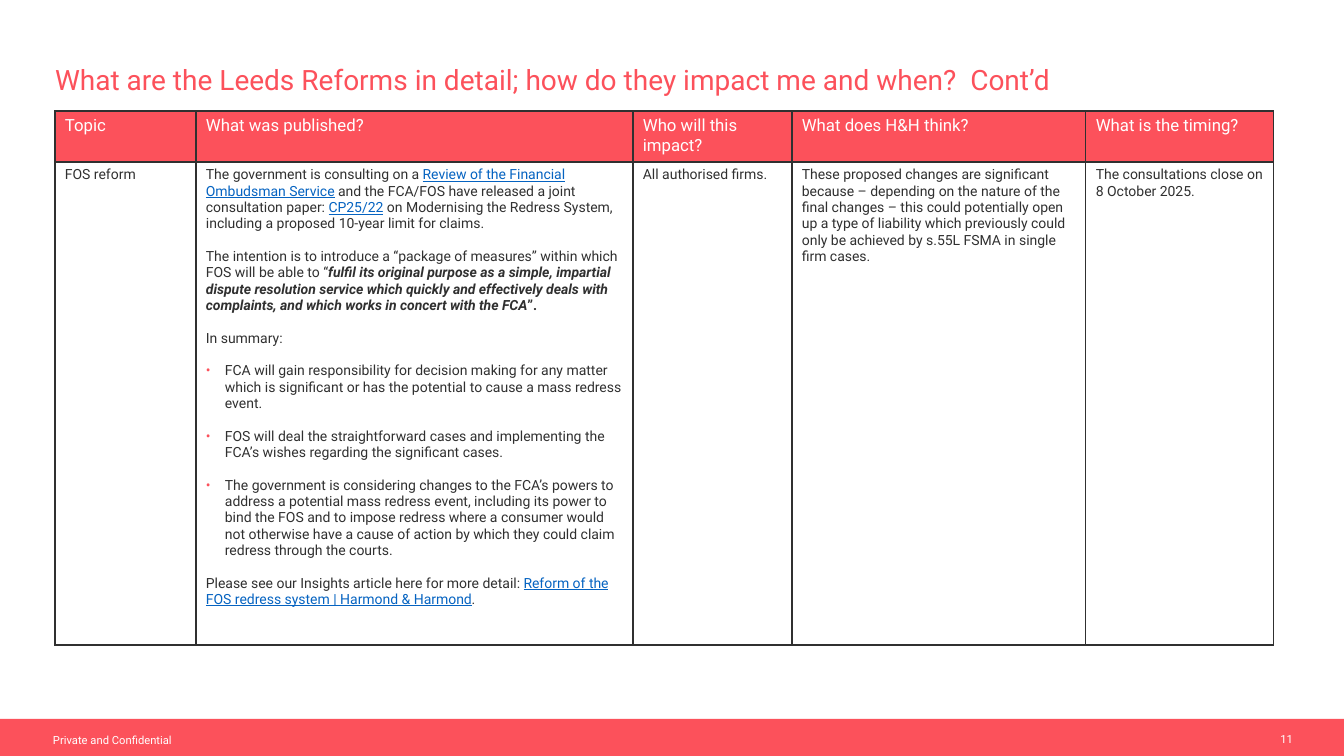
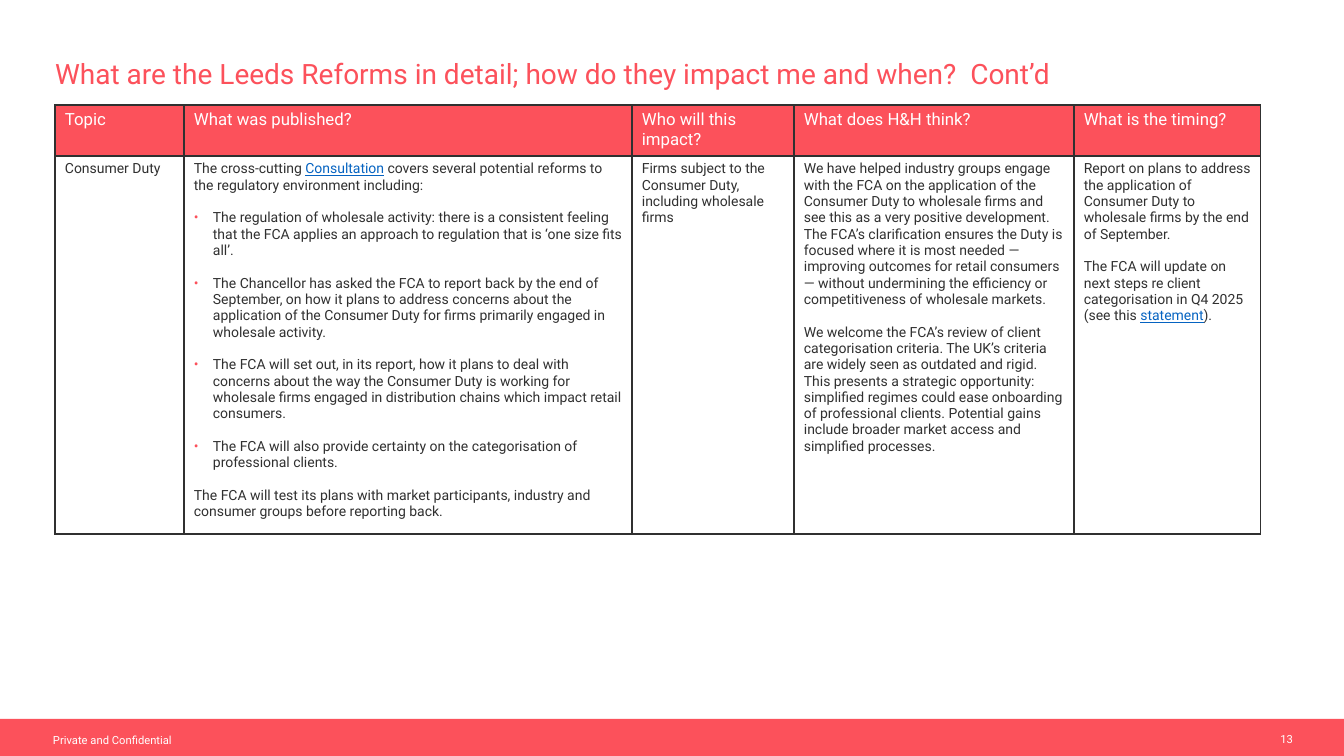
from lxml.etree import SubElement
from pptx import Presentation
from pptx.dml.color import RGBColor
from pptx.enum.shapes import MSO_SHAPE as Shape
from pptx.enum.text import MSO_ANCHOR as Anchor, MSO_AUTO_SIZE as AutoSize, PP_ALIGN as Align
from pptx.oxml import parse_xml
from pptx.oxml.ns import nsdecls, qn
from pptx.util import Emu, Pt

WIDTH, HEIGHT = 1344, 756
TITLE = "What are the Leeds Reforms in detail; how do they impact me and when?  Cont’d"
HEADERS = ["Topic", "What was published?", "Who will this impact?",
           "What does H&H think?", "What is the timing?"]


def px(length):
    return Emu(round(length * 914400 / 100.8))


def color(value):
    return RGBColor.from_string(value)


class Deck:
    FONT = "Roboto"
    RED, DARK, BLUE, WHITE = "FC515B", "303030", "0563C1", "FFFFFF"
    LEFT, HEADER_HEIGHT, INDENT = 55, 51, 19
    PARAGRAPH_GAP = Pt(11.7)

    def __init__(self):
        self.presentation = Presentation()
        self.presentation.slide_width = px(WIDTH)
        self.presentation.slide_height = px(HEIGHT)
        self.slide = None

    def add_slide(self, number, top):
        layout = self.presentation.slide_layouts[5]
        self.slide = self.presentation.slides.add_slide(layout)
        self.band(719, HEIGHT - 719)
        self.label("Private and Confidential", 53, 734, 190, 13, margin=0)
        self.label(number, 1248, 724, 55, 29, margin=10, align=Align.RIGHT)
        self.title(TITLE, top)

    def run(self, paragraph, text, size, fill, style=None):
        run = paragraph.add_run()
        run.text = text
        font = run.font
        font.name, font.size = self.FONT, Pt(size)
        font.bold = style in ("strong", "quote")
        font.italic = style == "quote"
        font.underline = style == "link"
        font.color.rgb = color(self.BLUE if style == "link" else fill)

    def band(self, top, height):
        shape = self.slide.shapes.add_shape(Shape.RECTANGLE, 0, px(top), px(WIDTH), px(height))
        shape.shadow.inherit = False
        shape.fill.solid()
        shape.fill.fore_color.rgb = color(self.RED)
        shape.line.fill.background()

    def label(self, text, left, top, width, height, margin, align=Align.LEFT):
        box = self.slide.shapes.add_textbox(px(left), px(top), px(width), px(height))
        frame = box.text_frame
        frame.word_wrap = True
        frame.vertical_anchor = Anchor.MIDDLE
        frame.margin_left = frame.margin_right = px(margin)
        frame.margin_top = frame.margin_bottom = 0
        paragraph = frame.paragraphs[0]
        paragraph.alignment = align
        self.run(paragraph, text, 8, self.WHITE)

    def title(self, text, top):
        shape = self.slide.shapes.title
        shape.left, shape.top = px(self.LEFT), px(top)
        shape.width, shape.height = px(1232), px(44)
        frame = shape.text_frame
        frame.auto_size = AutoSize.NONE
        frame.word_wrap = True
        frame.vertical_anchor = Anchor.TOP
        frame.margin_left = 0
        frame.margin_top = frame.margin_right = frame.margin_bottom = px(5)
        paragraph = frame.paragraphs[0]
        paragraph.alignment = Align.LEFT
        self.run(paragraph, text, 20, self.RED)

    def bullet(self, paragraph):
        properties = paragraph._p.get_or_add_pPr()
        properties.set("marL", str(px(self.INDENT)))
        properties.set("indent", str(-px(self.INDENT)))
        bullet_color = SubElement(properties, qn("a:buClr"))
        SubElement(bullet_color, qn("a:srgbClr"), val=self.RED)
        SubElement(properties, qn("a:buFont"), typeface=self.FONT)
        SubElement(properties, qn("a:buChar"), char="•")

    def borders(self, cell):
        properties = cell._tc.get_or_add_tcPr()
        for index, side in enumerate("LRTB"):
            properties.insert(index, parse_xml(
                f'<a:ln{side} {nsdecls("a")} w="{Pt(1)}"><a:solidFill>'
                f'<a:srgbClr val="{self.DARK}"/></a:solidFill></a:ln{side}>'))

    def cell(self, cell, paragraphs, size, text_color, fill=None):
        if fill:
            cell.fill.solid()
            cell.fill.fore_color.rgb = color(fill)
        else:
            cell.fill.background()
        self.borders(cell)
        cell.margin_left = cell.margin_right = px(10)
        cell.margin_top = cell.margin_bottom = px(5)
        frame = cell.text_frame
        for index, (kind, runs) in enumerate(paragraphs):
            paragraph = frame.add_paragraph() if index else frame.paragraphs[0]
            if kind == "bullet":
                self.bullet(paragraph)
            if index:
                paragraph.space_before = self.PARAGRAPH_GAP
            for text, style in runs:
                self.run(paragraph, text, size, text_color, style)

    def table(self, top, widths, body_height, body):
        heights = [self.HEADER_HEIGHT, body_height]
        table = self.slide.shapes.add_table(
            2, len(widths), px(self.LEFT), px(top), px(sum(widths)), px(sum(heights))).table
        table.first_row = table.horz_banding = False
        for row, height in zip(table.rows, heights):
            row.height = px(height)
        for index, (width, header, paragraphs) in enumerate(zip(widths, HEADERS, body)):
            table.columns[index].width = px(width)
            self.cell(table.cell(0, index), [plain(header)], 12, self.WHITE, self.RED)
            self.cell(table.cell(1, index), paragraphs, 10, self.DARK)


def rich(*runs):
    return "plain", [run if isinstance(run, tuple) else (run, None) for run in runs]


def plain(text):
    return rich(text)


def bullet(text):
    return "bullet", [(text, None)]


def link(text):
    return text, "link"


FOS_REFORM = [
    [plain("FOS reform")],
    [
        rich("The government is consulting on a ",
             link("Review of the Financial Ombudsman Service"),
             " and the FCA/FOS have released a joint consultation paper: ",
             link("CP25/22"),
             " on Modernising the Redress System, including a proposed 10-year limit for claims."),
        rich("The intention is to introduce a “package of measures” within which FOS will be able to “",
             ("fulfil its original purpose as a simple, impartial dispute resolution service which "
              "quickly and effectively deals with complaints, and which works in concert with the FCA",
              "quote"),
             ("”.", "strong")),
        plain("In summary:"),
        bullet("FCA will gain responsibility for decision making for any matter which is significant "
               "or has the potential to cause a mass redress event."),
        bullet("FOS will deal the straightforward cases and implementing the FCA’s wishes regarding "
               "the significant cases."),
        bullet("The government is considering changes to the FCA’s powers to address a potential mass "
               "redress event, including its power to bind the FOS and to impose redress where a "
               "consumer would not otherwise have a cause of action by which they could claim redress "
               "through the courts."),
        rich("Please see our Insights article here for more detail: ",
             link("Reform of the FOS redress system | Harmond & Harmond"), "."),
    ],
    [plain("All authorised firms.")],
    [plain("These proposed changes are significant because – depending on the nature of the final "
           "changes – this could potentially open up a type of liability which previously could only "
           "be achieved by s.55L FSMA in single firm cases.")],
    [plain("The consultations close on 8 October 2025.")],
]

CONSUMER_DUTY = [
    [plain("Consumer Duty")],
    [
        rich("The cross-cutting ", link("Consultation"),
             " covers several potential reforms to the regulatory environment including:"),
        bullet("The regulation of wholesale activity: there is a consistent feeling that the FCA "
               "applies an approach to regulation that is ‘one size fits all’."),
        bullet("The Chancellor has asked the FCA to report back by the end of September, on how it "
               "plans to address concerns about the application of the Consumer Duty for firms "
               "primarily engaged in wholesale activity."),
        bullet("The FCA will set out, in its report, how it plans to deal with concerns about the way "
               "the Consumer Duty is working for wholesale firms engaged in distribution chains which "
               "impact retail consumers."),
        bullet("The FCA will also provide certainty on the categorisation of professional clients."),
        plain("The FCA will test its plans with market participants, industry and consumer groups "
              "before reporting back."),
    ],
    [plain("Firms subject to the Consumer Duty, including wholesale firms")],
    [
        plain("We have helped industry groups engage with the FCA on the application of the Consumer "
              "Duty to wholesale firms and see this as a very positive development. The FCA’s "
              "clarification ensures the Duty is focused where it is most needed — improving outcomes "
              "for retail consumers — without undermining the efficiency or competitiveness of "
              "wholesale markets."),
        plain("We welcome the FCA’s review of client categorisation criteria. The UK’s criteria are "
              "widely seen as outdated and rigid. This presents a strategic opportunity: simplified "
              "regimes could ease onboarding of professional clients. Potential gains include broader "
              "market access and simplified processes."),
    ],
    [
        plain("Report on plans to address the application of Consumer Duty to wholesale firms by the "
              "end of September."),
        rich("The FCA will update on next steps re client categorisation in Q4 2025 (see this ",
             link("statement"), ")."),
    ],
]


def main():
    deck = Deck()
    deck.add_slide("11", top=57)
    deck.table(111, [141, 437, 159, 294, 188], 483, FOS_REFORM)
    deck.add_slide("13", top=51)
    deck.table(105, [129, 448, 162, 280, 187], 369, CONSUMER_DUTY)
    deck.presentation.save("out.pptx")


if __name__ == "__main__":
    main()
